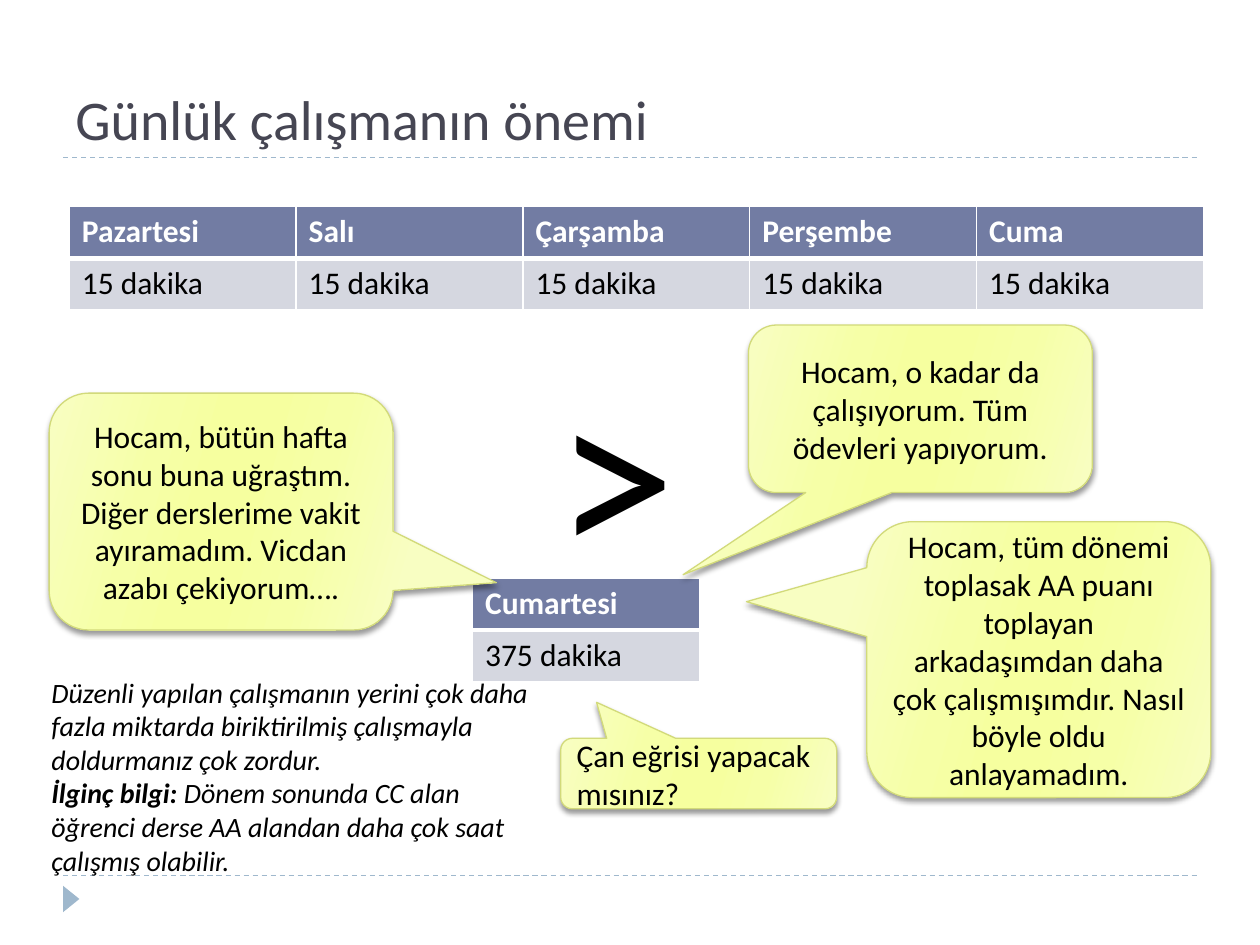
from typing import NamedTuple

from lxml.etree import SubElement
from pptx import Presentation
from pptx.dml.color import RGBColor
from pptx.enum.dml import MSO_LINE_DASH_STYLE as Dash
from pptx.enum.shapes import MSO_CONNECTOR as Connector, MSO_SHAPE as Shape
from pptx.enum.text import MSO_ANCHOR as Anchor, PP_ALIGN as Align
from pptx.oxml.ns import qn
from pptx.util import Inches, Pt


class Theme(NamedTuple):
    font: str = "Calibri"
    title_size: float = 32
    body_size: float = 18
    note_size: float = 16
    sign_size: float = 138
    title: str = "464653"
    text: str = "000000"
    white: str = "FFFFFF"
    accent: str = "9FB8CD"
    header: str = "727CA3"
    body: str = "D5D7E0"
    callout_line: str = "D2DA7A"
    callout_stops: tuple = ((0, "F8FEC2"), (30, "F6FFA7"), (45, "F6FF9F"),
                            (55, "F6FF9F"), (73, "F6FFA7"), (100, "F8FEC2"))
    callout_angle: int = 16


class Box(NamedTuple):
    left: float
    top: float
    width: float
    height: float

    def lengths(self) -> list:
        return [Inches(value) for value in self]


class Span(NamedTuple):
    text: str
    size: float
    color: str
    bold: bool = False
    italic: bool = False


class Callout(NamedTuple):
    box: Box
    tip: tuple  # pointer tip from the centre, as shares of width and height
    text: str
    align: Align = Align.CENTER


class DayTable(NamedTuple):
    left: float
    top: float
    days: tuple
    duration: str


THEME = Theme()
COLUMN_WIDTH, ROW_HEIGHT = 1.8, 0.41
CORNER = 0.167
RULE_LEFT, RULE_RIGHT, RULE_TOPS = 0.5, 9.5, (1.25, 6.95)

TABLES = (
    DayTable(0.55, 1.64, ("Pazartesi", "Salı", "Çarşamba", "Perşembe", "Cuma"), "15 dakika"),
    DayTable(3.75, 4.59, ("Cumartesi",), "375 dakika"),
)
CALLOUTS = (
    Callout(Box(0.39, 3.12, 2.73, 1.88), (0.8, 0.3),
            "Hocam, bütün hafta sonu buna uğraştım. Diğer derslerime vakit "
            "ayıramadım. Vicdan azabı çekiyorum…."),
    Callout(Box(5.94, 2.58, 2.73, 1.33), (-0.69, 0.99),
            "Hocam, o kadar da çalışıyorum. Tüm ödevleri yapıyorum."),
    Callout(Box(6.88, 4.14, 2.73, 2.19), (-0.85, -0.21),
            "Hocam, tüm dönemi toplasak AA puanı toplayan arkadaşımdan daha "
            "çok çalışmışımdır. Nasıl böyle oldu anlayamadım."),
    Callout(Box(4.45, 5.86, 2.19, 0.56), (-0.37, -1.01),
            "Çan eğrisi yapacak mısınız?", Align.LEFT),
)
NOTES = (
    (Span("Düzenli yapılan çalışmanın yerini çok daha fazla miktarda "
          "biriktirilmiş çalışmayla doldurmanız çok zordur.",
          THEME.note_size, THEME.text, italic=True),),
    (Span("İlginç bilgi: ", THEME.note_size, THEME.text, True, True),
     Span("Dönem sonunda CC alan öğrenci derse AA alandan daha çok saat "
          "çalışmış olabilir.", THEME.note_size, THEME.text, italic=True)),
)


def rgb(color: str) -> RGBColor:
    return RGBColor.from_string(color)


def add_element(parent, tag: str, **attributes):
    return SubElement(parent, qn(tag), {key: str(value) for key, value in attributes.items()})


def write(frame, paragraphs: tuple, align: Align = Align.LEFT, anchor: Anchor = Anchor.TOP) -> None:
    frame.word_wrap = True
    frame.vertical_anchor = anchor
    for index, spans in enumerate(paragraphs):
        para = frame.add_paragraph() if index else frame.paragraphs[0]
        para.alignment = align
        for span in spans:
            run = para.add_run()
            run.text = span.text
            formats = {"name": THEME.font, "size": Pt(span.size),
                       "bold": span.bold, "italic": span.italic}
            for name, value in formats.items():
                setattr(run.font, name, value)
            run.font.color.rgb = rgb(span.color)


def add_text(page, box: Box, paragraphs: tuple, **layout) -> None:
    write(page.shapes.add_textbox(*box.lengths()).text_frame, paragraphs, **layout)


def add_rule(page, top: float) -> None:
    rule = page.shapes.add_connector(Connector.STRAIGHT, Inches(RULE_LEFT), Inches(top),
                                     Inches(RULE_RIGHT), Inches(top))
    rule.line.color.rgb = rgb(THEME.accent)
    rule.line.width = Pt(0.75)
    rule.line.dash_style = Dash.DASH
    add_element(rule._element.spPr, "a:effectLst")


def add_marker(page, box: Box) -> None:
    marker = page.shapes.add_shape(Shape.ISOSCELES_TRIANGLE, *box.lengths())
    marker.rotation = 90
    marker.shadow.inherit = False
    marker.fill.solid()
    marker.fill.fore_color.rgb = rgb(THEME.accent)
    marker.line.fill.background()


def border_cell(cell, widths: dict) -> None:
    """Draw white borders; call before the fill, which must follow them in the XML."""
    properties = cell._tc.get_or_add_tcPr()
    for side, width in widths.items():
        line = add_element(properties, f"a:ln{side}", w=Pt(width))
        add_element(add_element(line, "a:solidFill"), "a:srgbClr", val=THEME.white)


def add_day_table(page, days: DayTable) -> None:
    count = len(days.days)
    box = Box(days.left, days.top, COLUMN_WIDTH * count, ROW_HEIGHT * 2)
    table = page.shapes.add_table(2, count, *box.lengths()).table
    table.horz_banding = False
    rows = (
        (days.days, THEME.header, THEME.white, True, {"L": 1, "R": 1, "T": 1, "B": 3}),
        ((days.duration,) * count, THEME.body, THEME.text, False, {"L": 1, "R": 1, "T": 3, "B": 1}),
    )
    for row, (texts, fill, color, bold, borders) in enumerate(rows):
        for column, text in enumerate(texts):
            cell = table.cell(row, column)
            border_cell(cell, borders)
            cell.fill.solid()
            cell.fill.fore_color.rgb = rgb(fill)
            write(cell.text_frame, ((Span(text, THEME.body_size, color, bold),),))


def add_callout(page, callout: Callout) -> None:
    shape = page.shapes.add_shape(Shape.ROUNDED_RECTANGULAR_CALLOUT, *callout.box.lengths())
    for index, value in enumerate((*callout.tip, CORNER)):
        shape.adjustments[index] = value
    shape.line.color.rgb = rgb(THEME.callout_line)
    shape.line.width = Pt(0.75)

    shape.fill.gradient()
    gradient = shape._element.spPr.find(qn("a:gradFill"))
    for child in list(gradient):
        gradient.remove(child)
    stops = add_element(gradient, "a:gsLst")
    for position, color in THEME.callout_stops:
        add_element(add_element(stops, "a:gs", pos=position * 1000), "a:srgbClr", val=color)
    add_element(gradient, "a:lin", ang=THEME.callout_angle * 60000, scaled=0)

    effects = add_element(shape._element.spPr, "a:effectLst")
    shadow = add_element(effects, "a:outerShdw", blurRad=Pt(3), dist=Pt(2),
                         dir=90 * 60000, rotWithShape=0)
    add_element(add_element(shadow, "a:srgbClr", val=THEME.text), "a:alpha", val=40000)
    write(shape.text_frame, ((Span(callout.text, THEME.body_size, THEME.text),),),
          callout.align, Anchor.MIDDLE)


def main() -> None:
    deck = Presentation()
    deck.slide_width, deck.slide_height = Inches(10), Inches(7.5)
    page = deck.slides.add_slide(deck.slide_layouts[6])
    for top in RULE_TOPS:
        add_rule(page, top)
    add_marker(page, Box(0.46, 7.07, 0.21, 0.13))
    add_text(page, Box(0.5, 0.17, 9, 1.08),
             ((Span("Günlük çalışmanın önemi", THEME.title_size, THEME.title),),),
             anchor=Anchor.BOTTOM)
    for days in TABLES:
        add_day_table(page, days)
    add_text(page, Box(3.75, 2.5, 2.27, 2.42),
             ((Span(">", THEME.sign_size, THEME.text),),), align=Align.CENTER)
    for callout in CALLOUTS:
        add_callout(page, callout)
    add_text(page, Box(0.31, 5.31, 3.98, 1.99), NOTES)
    deck.save("out.pptx")


if __name__ == "__main__":
    main()
